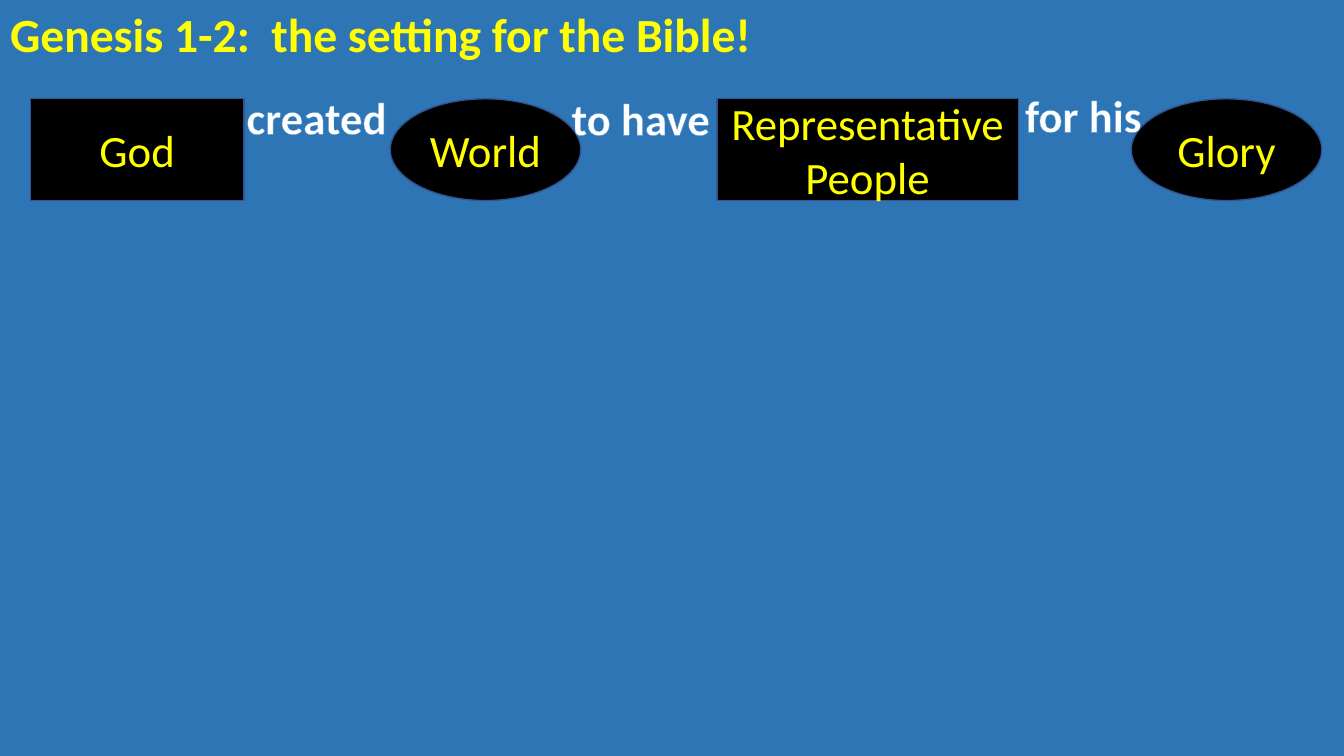
"""Build the Genesis 1-2 slide: a title over a sentence made of shapes and linking words."""
from lxml.etree import SubElement
from pptx import Presentation
from pptx.dml.color import RGBColor
from pptx.enum.shapes import MSO_SHAPE
from pptx.enum.text import MSO_ANCHOR, MSO_AUTO_SIZE, PP_ALIGN
from pptx.oxml.ns import qn
from pptx.util import Inches, Pt

YELLOW, WHITE, BLACK = "FFFF00", "FFFFFF", "000000"
BLUE, EDGE, OUTLINE = "2E75B6", "325491", "5B9BD5"
ROW_TOP, ROW_HEIGHT, WORD_HEIGHT = 0.98, 1.01, 0.64


def color(hex_value):
    return RGBColor.from_string(hex_value)


def write(sp, text, hex_value, align, frame, font):
    tf = sp.text_frame
    for name, value in frame.items():
        setattr(tf, name, value)
    p = tf.paragraphs[0]
    p.alignment = align
    r = p.add_run()
    r.text = text
    for name, value in {"name": "Calibri", **font}.items():
        setattr(r.font, name, value)
    r.font.color.rgb = color(hex_value)
    return r


prs = Presentation()
prs.slide_width, prs.slide_height = Inches(13.33), Inches(7.5)
s = prs.slides.add_slide(prs.slide_layouts[5])
s.background.fill.solid()
s.background.fill.fore_color.rgb = color(BLUE)

title = s.shapes.title
for name, value in {"left": 0, "top": 0, "width": 8.1, "height": 0.67}.items():
    setattr(title, name, Inches(value))
write(title, "Genesis 1-2:  the setting for the Bible!", YELLOW, PP_ALIGN.LEFT,
      {"word_wrap": True, "auto_size": MSO_AUTO_SIZE.SHAPE_TO_FIT_TEXT,
       "vertical_anchor": MSO_ANCHOR.TOP},
      {"size": Pt(34), "bold": True})

sentence = s.shapes.add_group_shape()

for kind, text, left, width in [
    (MSO_SHAPE.RECTANGLE, "God", 0.3, 2.12),
    (MSO_SHAPE.RECTANGLE, "Representative People", 7.11, 2.99),
    (MSO_SHAPE.OVAL, "World", 3.87, 1.89),
    (MSO_SHAPE.OVAL, "Glory", 11.22, 1.89),
]:
    sp = sentence.shapes.add_shape(kind, Inches(left), Inches(ROW_TOP),
                                   Inches(width), Inches(ROW_HEIGHT))
    sp.shadow.inherit = False
    sp.fill.solid()
    sp.fill.fore_color.rgb = color(BLACK)
    sp.line.color.rgb = color(EDGE)
    sp.line.width = Pt(1)
    write(sp, text, YELLOW, PP_ALIGN.CENTER,
          {"word_wrap": True, "vertical_anchor": MSO_ANCHOR.MIDDLE},
          {"size": Pt(32)})

for text, left, top, width in [
    ("created", 2.34, 0.84, 1.6),
    ("to have", 5.56, 0.85, 1.59),
    ("for his", 10.06, 0.82, 1.37),
]:
    sp = sentence.shapes.add_textbox(Inches(left), Inches(top),
                                     Inches(width), Inches(WORD_HEIGHT))
    r = write(sp, text, WHITE, PP_ALIGN.CENTER,
              {"word_wrap": False, "auto_size": MSO_AUTO_SIZE.SHAPE_TO_FIT_TEXT},
              {"size": Pt(32), "bold": True})
    rPr = r.font._element if hasattr(r.font, "_element") else r._r.get_or_add_rPr()
    ln = SubElement(rPr, qn("a:ln"), w=str(Pt(0.8)))
    SubElement(SubElement(ln, qn("a:solidFill")), qn("a:srgbClr"), val=OUTLINE)
    rPr.insert(0, ln)

prs.save("out.pptx")
